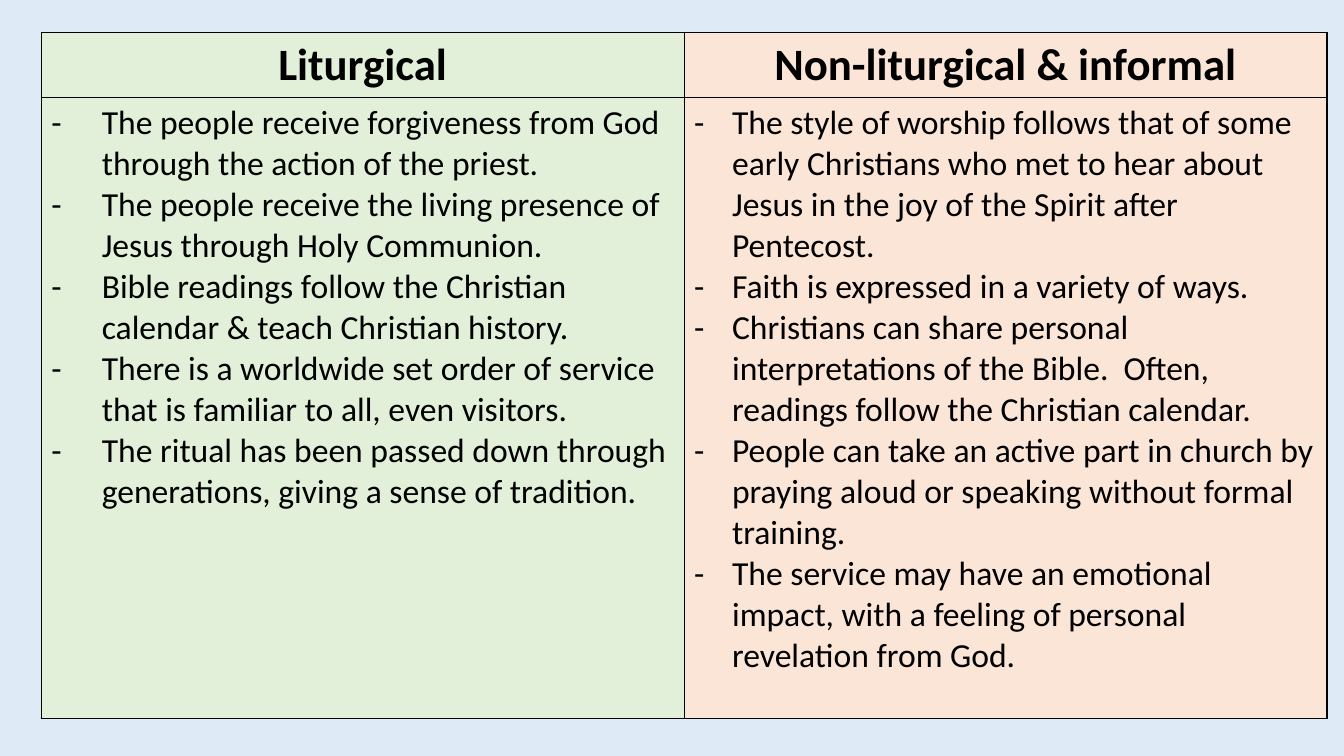
from lxml.etree import SubElement
from pptx import Presentation
from pptx.dml.color import RGBColor
from pptx.enum.text import PP_ALIGN
from pptx.oxml import parse_xml
from pptx.oxml.ns import nsdecls, qn
from pptx.util import Pt

COLOURS = {
    "background": "DEEBF7",
    "liturgical": "E2F0D9",
    "informal": "FBE5D6",
    "ink": "000000",
}
HEADING = {"name": "Calibri", "size": Pt(32), "bold": True}
BODY = {"name": "Calibri", "size": Pt(24), "bold": False}

WORSHIP_STYLES = [
    ("Liturgical", "liturgical", 36, [
        "The people receive forgiveness from God through the action of the priest.",
        "The people receive the living presence of Jesus through Holy Communion.",
        "Bible readings follow the Christian calendar & teach Christian history.",
        "There is a worldwide set order of service that is familiar to all, even visitors.",
        "The ritual has been passed down through generations, giving a sense of tradition.",
    ]),
    ("Non-liturgical & informal", "informal", 27, [
        "The style of worship follows that of some early Christians who met to hear about "
        "Jesus in the joy of the Spirit after Pentecost.",
        "Faith is expressed in a variety of ways.",
        "Christians can share personal interpretations of the Bible.  Often, readings follow "
        "the Christian calendar.",
        "People can take an active part in church by praying aloud or speaking without "
        "formal training.",
        "The service may have an emotional impact, with a feeling of personal revelation "
        "from God.",
    ]),
]


class SlideBuilder:
    def __init__(self, presentation, background):
        self.slide = presentation.slides.add_slide(presentation.slide_layouts[6])
        fill = self.slide.background.fill
        fill.solid()
        fill.fore_color.rgb = self.colour(background)

    def colour(self, name):
        return RGBColor.from_string(COLOURS[name])

    def table(self, left, top, widths, heights):
        frame = self.slide.shapes.add_table(
            len(heights), len(widths), Pt(left), Pt(top), Pt(sum(widths)), Pt(sum(heights)))
        grid = frame.table
        grid.first_row = grid.horz_banding = False
        for column, width in zip(grid.columns, widths):
            column.width = Pt(width)
        for row, height in zip(grid.rows, heights):
            row.height = Pt(height)
        return grid

    def cell(self, cell, fill):
        cell.fill.solid()
        cell.fill.fore_color.rgb = self.colour(fill)
        properties = cell._tc.get_or_add_tcPr()
        for position, side in enumerate("LRTB"):
            properties.insert(position, parse_xml(
                f'<a:ln{side} {nsdecls("a")} w="{Pt(1)}"><a:solidFill>'
                f'<a:srgbClr val="{COLOURS["ink"]}"/></a:solidFill></a:ln{side}>'))

    def style(self, paragraph, text, formats):
        font = paragraph.add_run().font
        paragraph.runs[0].text = text
        for attribute, value in formats.items():
            setattr(font, attribute, value)
        font.color.rgb = self.colour("ink")

    def heading(self, cell, text):
        paragraph = cell.text_frame.paragraphs[0]
        paragraph.alignment = PP_ALIGN.CENTER
        self.style(paragraph, text, HEADING)

    def bullets(self, cell, points, indent):
        frame = cell.text_frame
        for number, point in enumerate(points):
            paragraph = frame.add_paragraph() if number else frame.paragraphs[0]
            properties = paragraph._p.get_or_add_pPr()
            properties.set("marL", str(Pt(indent)))
            properties.set("indent", str(-Pt(indent)))
            SubElement(properties, qn("a:buFont"), typeface=BODY["name"])
            SubElement(properties, qn("a:buChar"), char="-")
            self.style(paragraph, point, BODY)


def main():
    presentation = Presentation()
    presentation.slide_width = Pt(960)
    presentation.slide_height = Pt(540)
    builder = SlideBuilder(presentation, "background")
    comparison = builder.table(29.5, 23.2, [459.2] * len(WORSHIP_STYLES), [46, 443.6])
    for column, (title, fill, indent, points) in enumerate(WORSHIP_STYLES):
        title_cell, points_cell = (comparison.cell(row, column) for row in range(2))
        builder.cell(title_cell, fill)
        builder.cell(points_cell, fill)
        builder.heading(title_cell, title)
        builder.bullets(points_cell, points, indent)
    presentation.save("out.pptx")


if __name__ == "__main__":
    main()
